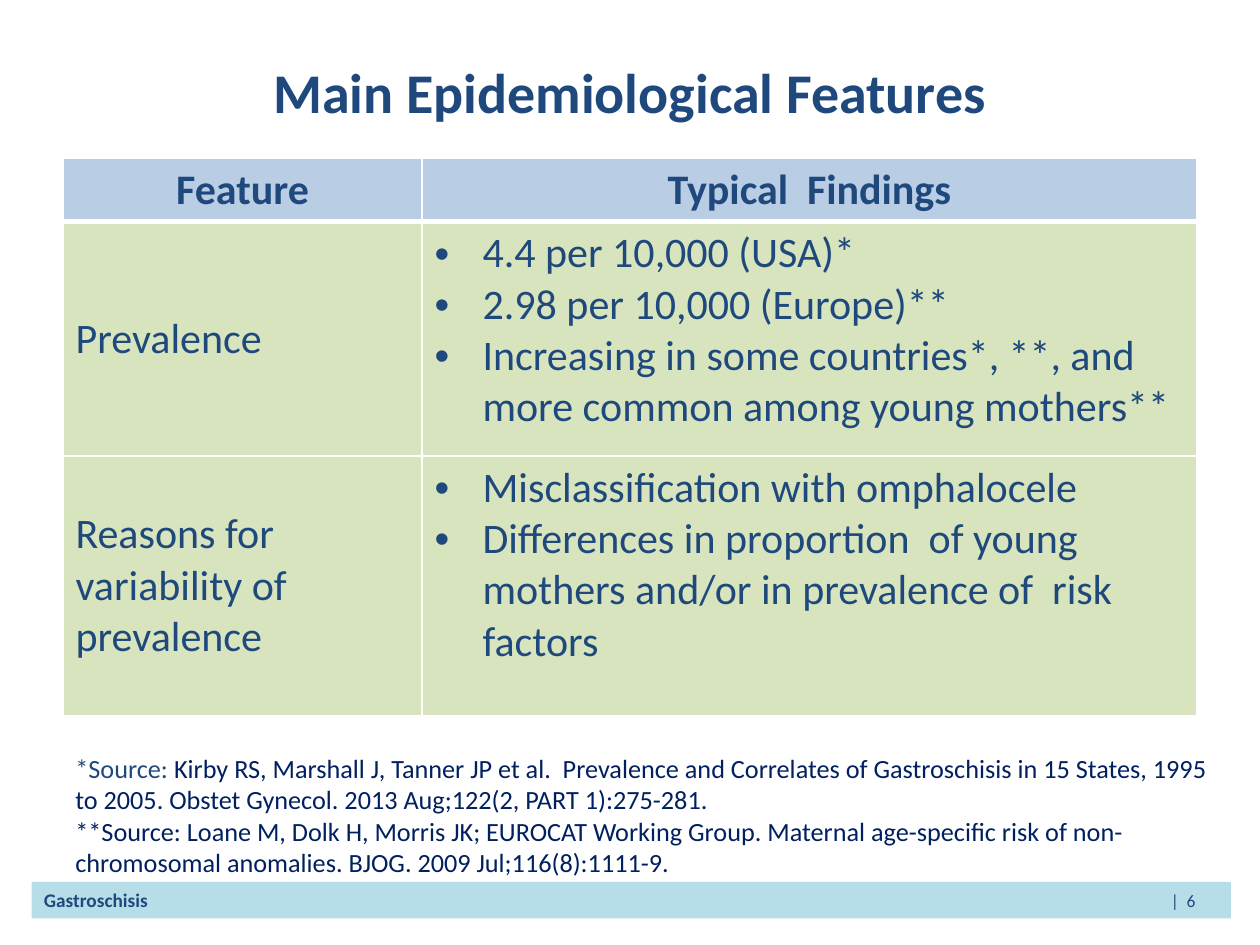
import pptx
import pptx.dml.color
import pptx.enum.shapes
import pptx.enum.text
import pptx.oxml.ns
import pptx.util
import lxml.etree

THEME = {
    "font": "Calibri",
    "navy": "1F497D", "ink": "002060", "white": "FFFFFF",
    "header": "B9CDE5", "body": "D7E4BD", "footer": "B7DEE8",
    "title_size": 32, "table_size": 24, "source_size": 15,
    "footer_size": 11, "page_size": 10,
}
RGB = pptx.dml.color.RGBColor.from_string
ALIGN = pptx.enum.text.PP_ALIGN
MIDDLE = pptx.enum.text.MSO_ANCHOR.MIDDLE
TOP = pptx.enum.text.MSO_ANCHOR.TOP
qn = pptx.oxml.ns.qn

prs = pptx.Presentation()
prs.slide_width = pptx.util.Inches(10)
prs.slide_height = pptx.util.Inches(7.5)
s = prs.slides.add_slide(prs.slide_layouts[6])


def area(left, top, width, height):
    """Turn percentages of the slide's width and height into lengths."""
    w, h = prs.slide_width / 100, prs.slide_height / 100
    return int(left * w), int(top * h), int(width * w), int(height * h)


def add_run(p, text, size, color="navy", bold=False):
    r = p.add_run()
    r.text = text
    r.font.name = THEME["font"]
    r.font.size = pptx.util.Pt(THEME[size])
    r.font.bold = bold
    r.font.color.rgb = RGB(THEME[color])


# Title
tf = s.shapes.add_textbox(*area(5, 1.33, 90, 16.67)).text_frame
tf.word_wrap = True
tf.vertical_anchor = MIDDLE
p = tf.paragraphs[0]
p.alignment = ALIGN.CENTER
add_run(p, "Main Epidemiological Features", "title_size", bold=True)

# Table: a cell holds its paragraphs; findings are bulleted
rows = [
    (["Feature"], ["Typical  Findings"]),
    (["Prevalence"],
     ["4.4 per 10,000 (USA)*",
      "2.98 per 10,000 (Europe)**",
      "Increasing in some countries*, **, and more common among young mothers**"]),
    (["Reasons for variability of prevalence"],
     ["Misclassification with omphalocele",
      "Differences in proportion  of young mothers and/or in prevalence of  risk factors"]),
]
table = s.shapes.add_table(3, 2, *area(5, 16.8, 90, 58.67)).table
for column, share in zip(table.columns, (28.5, 61.5)):
    column.width = int(prs.slide_width * share / 100)
for row, share in zip(table.rows, (6.4, 24.8, 27.47)):
    row.height = int(prs.slide_height * share / 100)

for i, row in enumerate(rows):
    for j, lines in enumerate(row):
        is_header, is_list = i == 0, i > 0 and j == 1
        cell = table.cell(i, j)
        cell.vertical_anchor = TOP if is_list else MIDDLE
        tcPr = cell._tc.get_or_add_tcPr()
        for side in ("lnL", "lnR", "lnT", "lnB"):
            thick = (is_header and side == "lnB") or (i == 1 and side == "lnT")
            ln = lxml.etree.SubElement(tcPr, qn("a:" + side), w=str(pptx.util.Pt(3 if thick else 1)))
            fill = lxml.etree.SubElement(ln, qn("a:solidFill"))
            lxml.etree.SubElement(fill, qn("a:srgbClr"), val=THEME["white"])
        cell.fill.solid()
        cell.fill.fore_color.rgb = RGB(THEME["header" if is_header else "body"])
        tf = cell.text_frame
        for n, line in enumerate(lines):
            p = tf.add_paragraph() if n else tf.paragraphs[0]
            p.alignment = ALIGN.CENTER if is_header else ALIGN.LEFT
            if is_list:
                pPr = p._p.get_or_add_pPr()
                indent = pptx.util.Inches(0.38)
                pPr.set("marL", str(indent))
                pPr.set("indent", str(-indent))
                lxml.etree.SubElement(pPr, qn("a:buFont"), typeface="Arial")
                lxml.etree.SubElement(pPr, qn("a:buChar"), char="•")
            add_run(p, line, "table_size", bold=is_header)

# Footer bar, with the page number at a right tab
sp = s.shapes.add_shape(pptx.enum.shapes.MSO_SHAPE.RECTANGLE, *area(2.5, 93.33, 95.2, 3.87))
sp.shadow.inherit = False
sp.fill.solid()
sp.fill.fore_color.rgb = RGB(THEME["footer"])
sp.line.fill.background()
tf = sp.text_frame
tf.word_wrap = True
tf.vertical_anchor = MIDDLE
p = tf.paragraphs[0]
p.alignment = ALIGN.LEFT
tabs = lxml.etree.SubElement(p._p.get_or_add_pPr(), qn("a:tabLst"))
lxml.etree.SubElement(tabs, qn("a:tab"), pos=str(int(prs.slide_width * 0.914)), algn="r")
add_run(p, "Gastroschisis\t", "footer_size", bold=True)
add_run(p, "|  6", "page_size")

# Sources
sources = [
    [("*Source: ", "navy"),
     ("Kirby RS, Marshall J, Tanner JP et al.  Prevalence and Correlates of Gastroschisis "
      "in 15 States, 1995 to 2005. Obstet Gynecol. 2013 Aug;122(2, PART 1):275-281.", "ink")],
    [("**Source: Loane M, Dolk H, Morris JK; EUROCAT Working Group. Maternal age-specific "
      "risk of non-chromosomal anomalies. BJOG. 2009 Jul;116(8):1111-9.", "ink")],
]
tf = s.shapes.add_textbox(*area(5, 78.93, 92.7, 14.8)).text_frame
tf.word_wrap = True
for n, runs in enumerate(sources):
    p = tf.add_paragraph() if n else tf.paragraphs[0]
    for text, color in runs:
        add_run(p, text, "source_size", color)

prs.save("out.pptx")
